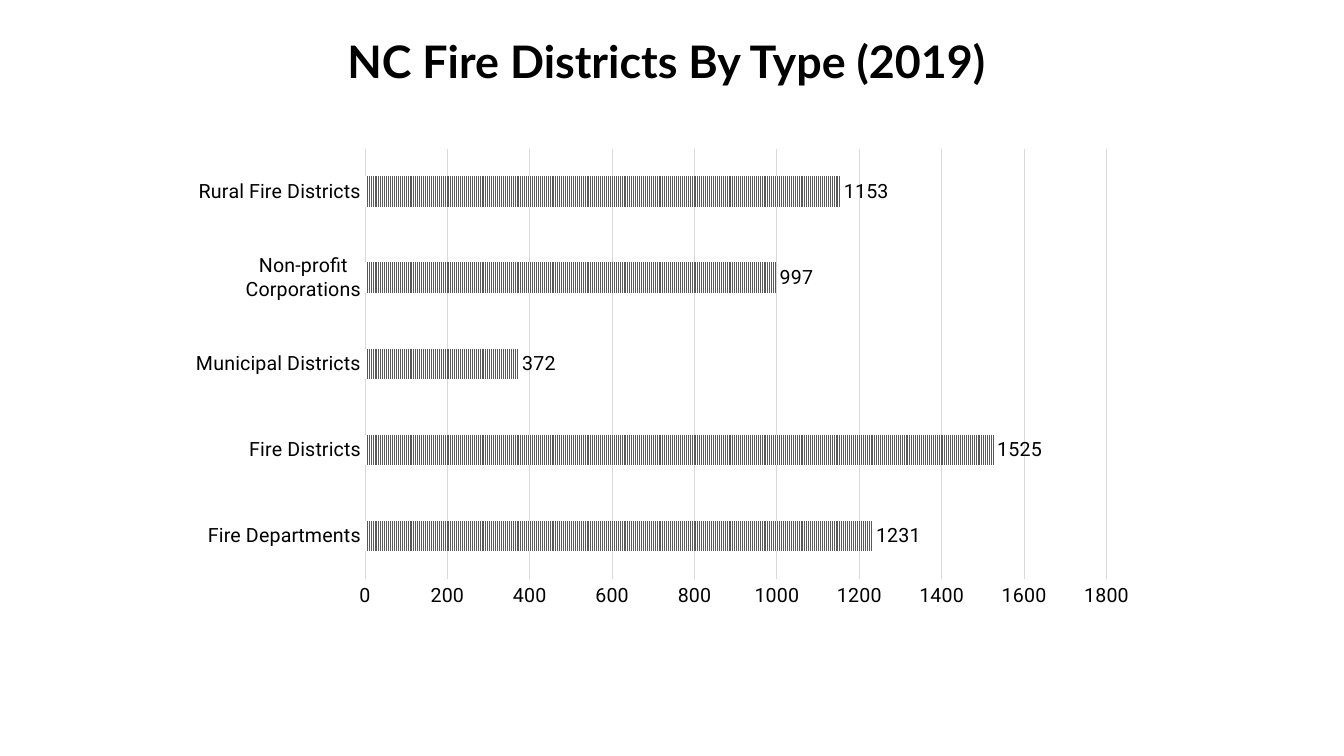
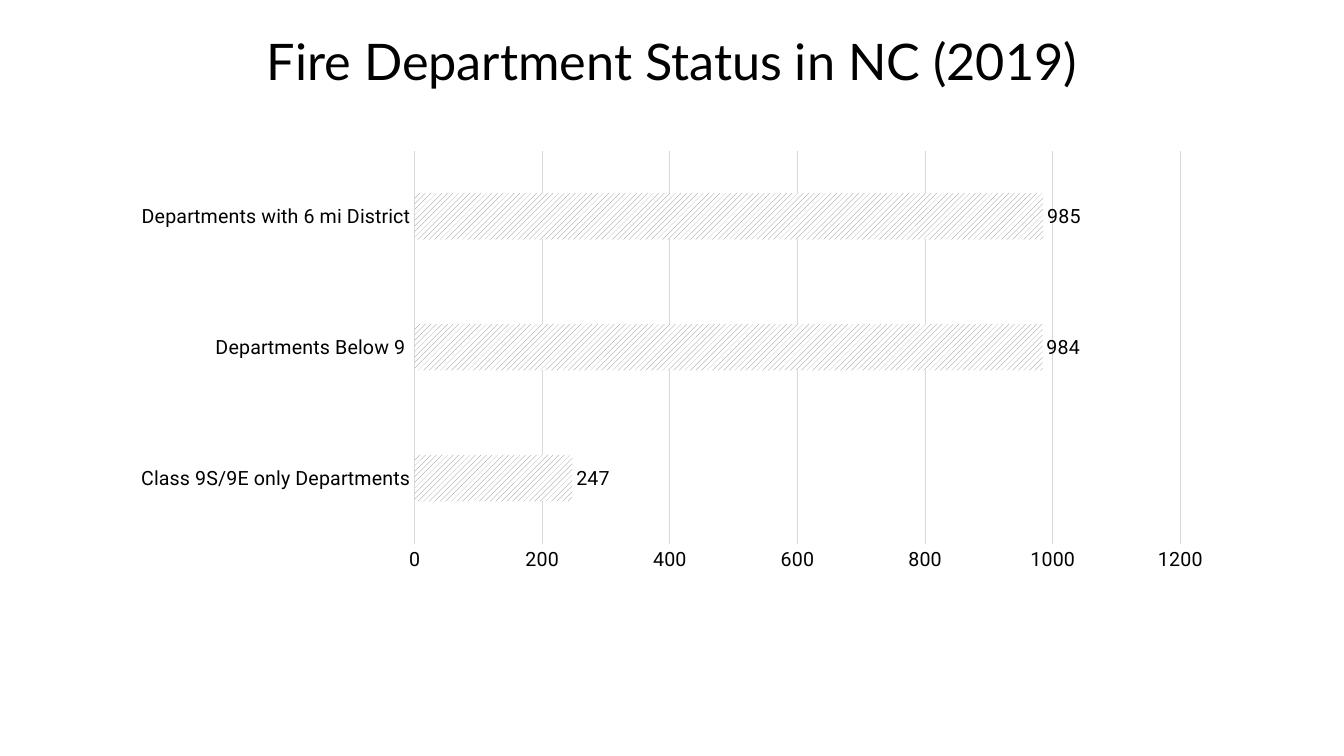
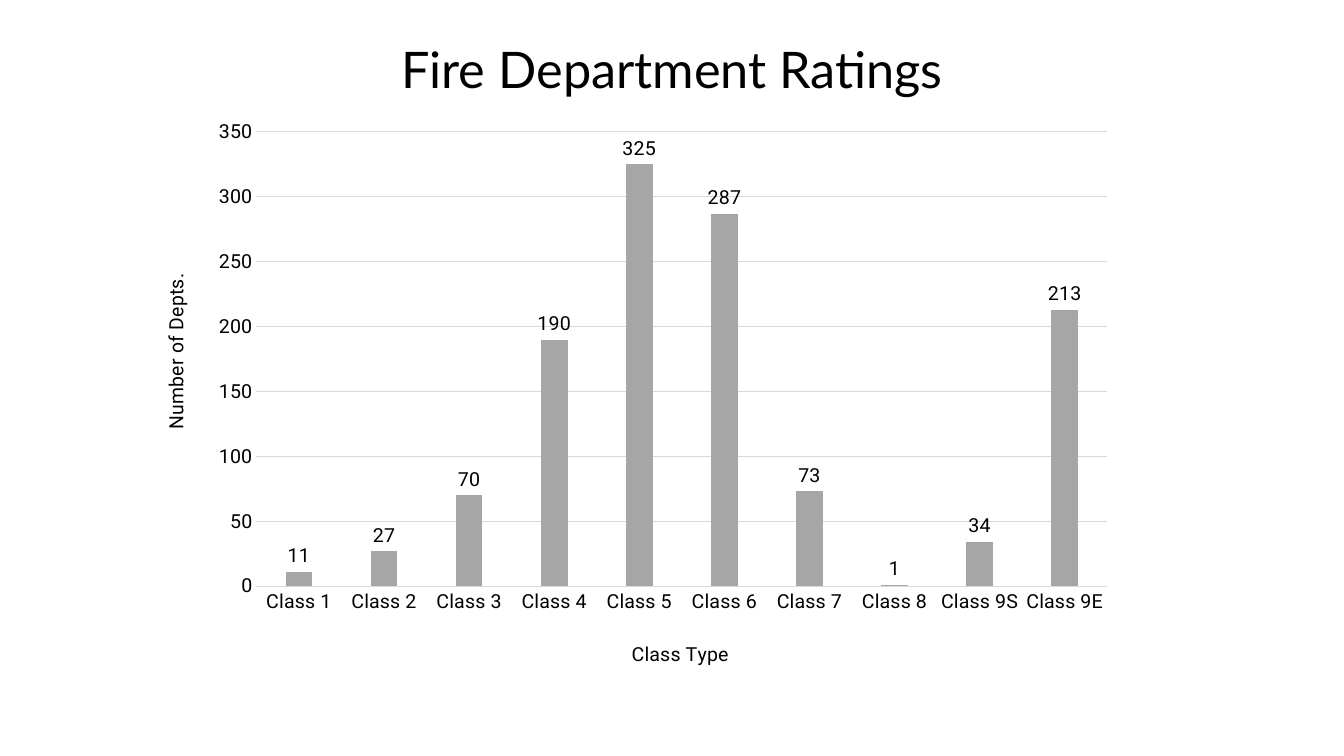
from dataclasses import dataclass
from typing import Any, Optional

from lxml.etree import SubElement
from pptx import Presentation
from pptx.chart.data import CategoryChartData
from pptx.dml.color import RGBColor
from pptx.enum.chart import XL_CHART_TYPE, XL_LABEL_POSITION, XL_TICK_MARK
from pptx.enum.dml import MSO_PATTERN
from pptx.enum.text import MSO_ANCHOR, MSO_AUTO_SIZE, PP_ALIGN
from pptx.oxml import parse_xml
from pptx.oxml.ns import nsdecls, qn
from pptx.util import Inches, Pt

COLORS = {
    "text": "000000",
    "paper": "FFFFFF",
    "grid": "D9D9D9",
    "dark": "595959",
    "middle": "808080",
    "light": "A6A6A6",
}
WIDTH, HEIGHT = Inches(13.33), Inches(7.5)
CHART_FONT = {"name": "Roboto", "size": Pt(14), "bold": False}
TITLE_FONT = {"name": "Lato"}
TITLE_FRAME = {
    "word_wrap": True,
    "vertical_anchor": MSO_ANCHOR.MIDDLE,
    "auto_size": MSO_AUTO_SIZE.SHAPE_TO_FIT_TEXT,
}
TITLE_ONLY = 5


@dataclass
class Box:
    """An area in percent of the slide's width and height."""
    left: float
    top: float
    width: float
    height: float


@dataclass
class Title:
    text: str
    box: Box
    size: int = 36
    bold: bool = False


@dataclass
class Graph:
    kind: XL_CHART_TYPE
    box: Box
    values: dict[str, int]
    top_value: int
    step: int
    gap: int
    fill: str
    pattern: Optional[MSO_PATTERN] = None
    overlap: int = 0
    plot_area: Optional[dict[str, float]] = None
    category_title: str = ""
    value_title: str = ""


@dataclass
class Page:
    title: Title
    graph: Graph


# Shared helpers
def color(name: str) -> RGBColor:
    return RGBColor.from_string(COLORS[name])


def apply(target: Any, formats: dict[str, Any]) -> None:
    for name, value in formats.items():
        setattr(target, name, value)


def style_font(font: Any, formats: dict[str, Any]) -> None:
    apply(font, formats)
    font.color.rgb = color("text")


def place(box: Box) -> dict[str, int]:
    return {
        "left": int(WIDTH * box.left / 100),
        "top": int(HEIGHT * box.top / 100),
        "width": int(WIDTH * box.width / 100),
        "height": int(HEIGHT * box.height / 100),
    }


def set_layout(parent: Any, index: int, shares: dict[str, float], inner: bool = False) -> None:
    """Fix a chart part at the given shares of the chart area."""
    for old in parent.findall(qn("c:layout")):
        parent.remove(old)
    layout = parse_xml(f"<c:layout {nsdecls('c')}><c:manualLayout/></c:layout>")
    manual = layout[0]
    if inner:
        SubElement(manual, qn("c:layoutTarget")).set("val", "inner")
    for mode in ("xMode", "yMode"):
        SubElement(manual, qn(f"c:{mode}")).set("val", "edge")
    for name, value in shares.items():
        SubElement(manual, qn(f"c:{name}")).set("val", str(value))
    parent.insert(index, layout)


# Titles
def add_title(page: Any, title: Title) -> None:
    shape = page.shapes.title
    apply(shape, place(title.box))
    frame = shape.text_frame
    apply(frame, TITLE_FRAME)
    para = frame.paragraphs[0]
    para.alignment = PP_ALIGN.CENTER
    span = para.add_run()
    span.text = title.text
    style_font(span.font, TITLE_FONT | {"size": Pt(title.size), "bold": title.bold})
    shadow = parse_xml(
        f'<a:effectLst {nsdecls("a")}>'
        '<a:outerShdw blurRad="38100" dist="38100" dir="2700000" algn="tl">'
        '<a:srgbClr val="000000"><a:alpha val="43000"/></a:srgbClr>'
        "</a:outerShdw></a:effectLst>"
    )
    span.font.fill._xPr.find(qn("a:solidFill")).addnext(shadow)


# Charts
def style_axis(axis: Any) -> None:
    apply(axis, {"major_tick_mark": XL_TICK_MARK.NONE, "minor_tick_mark": XL_TICK_MARK.NONE})
    style_font(axis.tick_labels.font, CHART_FONT)


def style_line(line: Any) -> None:
    line.color.rgb = color("grid")
    line.width = Pt(0.75)


def add_axis_title(axis: Any, text: str, left: float, top: float, turn: int = 0) -> None:
    title = axis.axis_title
    frame = title.text_frame
    span = frame.paragraphs[0].add_run()
    span.text = text
    style_font(span.font, CHART_FONT)
    apply_turn = frame._txBody.find(qn("a:bodyPr")).set
    apply_turn("rot", str(turn * 60000))
    apply_turn("vert", "horz")
    set_layout(title._element, 1, {"x": left, "y": top})


def add_graph(page: Any, graph: Graph) -> None:
    data = CategoryChartData()
    data.categories = list(graph.values)
    data.add_series("Series 1", list(graph.values.values()))
    area = place(graph.box)
    chart = page.shapes.add_chart(
        graph.kind, area["left"], area["top"], area["width"], area["height"], data
    ).chart
    apply(chart, {"has_legend": False, "has_title": False})
    style_font(chart.font, CHART_FONT)

    # Axes and grid
    categories, values = chart.category_axis, chart.value_axis
    for axis in (categories, values):
        style_axis(axis)
    style_line(categories.format.line)
    values.format.line.fill.background()
    apply(values, {
        "minimum_scale": 0,
        "maximum_scale": graph.top_value,
        "major_unit": graph.step,
        "has_major_gridlines": True,
    })
    style_line(values.major_gridlines.format.line)
    if graph.category_title:
        add_axis_title(categories, graph.category_title, 0.5, 0.95)
    if graph.value_title:
        add_axis_title(values, graph.value_title, 0.02, 0.3, turn=-90)
    if graph.plot_area:
        set_layout(chart._chartSpace.chart.plotArea, 0, graph.plot_area, inner=True)

    # Bars and their labels
    plot = chart.plots[0]
    apply(plot, {
        "gap_width": graph.gap,
        "overlap": graph.overlap,
        "vary_by_categories": False,
        "has_data_labels": True,
    })
    apply(plot.data_labels, {"show_value": True, "position": XL_LABEL_POSITION.OUTSIDE_END})
    style_font(plot.data_labels.font, CHART_FONT)
    fill = plot.series[0].format.fill
    if graph.pattern is None:
        fill.solid()
    else:
        fill.patterned()
        fill.pattern = graph.pattern
        fill.back_color.rgb = color("paper")
    fill.fore_color.rgb = color(graph.fill)


PAGES = [
    Page(
        Title("NC Fire Districts By Type (2019) ", Box(0, 3.73, 100, 8.53), 32, True),
        Graph(
            XL_CHART_TYPE.BAR_CLUSTERED,
            Box(13.13, 18.4, 72.32, 63.2),
            {
                "Fire Departments": 1231,
                "Fire Districts": 1525,
                "Municipal Districts": 372,
                "Non-profit Corporations": 997,
                "Rural Fire Districts": 1153,
            },
            top_value=1800, step=200, gap=182,
            fill="dark", pattern=MSO_PATTERN.LIGHT_VERTICAL,
        ),
    ),
    Page(
        Title("Fire Department Status in NC (2019)", Box(0, 3.2, 100, 9.47)),
        Graph(
            XL_CHART_TYPE.BAR_CLUSTERED,
            Box(8.85, 18.8, 82.3, 58),
            {
                "Class 9S/9E only Departments": 247,
                "Departments Below 9 ": 984,
                "Departments with 6 mi District": 985,
            },
            top_value=1200, step=200, gap=182,
            fill="middle", pattern=MSO_PATTERN.WIDE_UPWARD_DIAGONAL,
        ),
    ),
    Page(
        Title("Fire Department Ratings", Box(0, 4.27, 100, 9.47)),
        Graph(
            XL_CHART_TYPE.COLUMN_CLUSTERED,
            Box(10.35, 13.73, 72.77, 75.2),
            {
                "Class 1": 11, "Class 2": 27, "Class 3": 70, "Class 4": 190,
                "Class 5": 325, "Class 6": 287, "Class 7": 73, "Class 8": 1,
                "Class 9S": 34, "Class 9E": 213,
            },
            top_value=350, step=50, gap=219, fill="light", overlap=-27,
            plot_area={"x": 0.12, "y": 0.05, "w": 0.87, "h": 0.81},
            category_title="Class Type", value_title="Number of Depts.",
        ),
    ),
]


def main() -> None:
    deck = Presentation()
    apply(deck, {"slide_width": WIDTH, "slide_height": HEIGHT})
    for content in PAGES:
        page = deck.slides.add_slide(deck.slide_layouts[TITLE_ONLY])
        add_title(page, content.title)
        add_graph(page, content.graph)
    deck.save("out.pptx")


if __name__ == "__main__":
    main()
